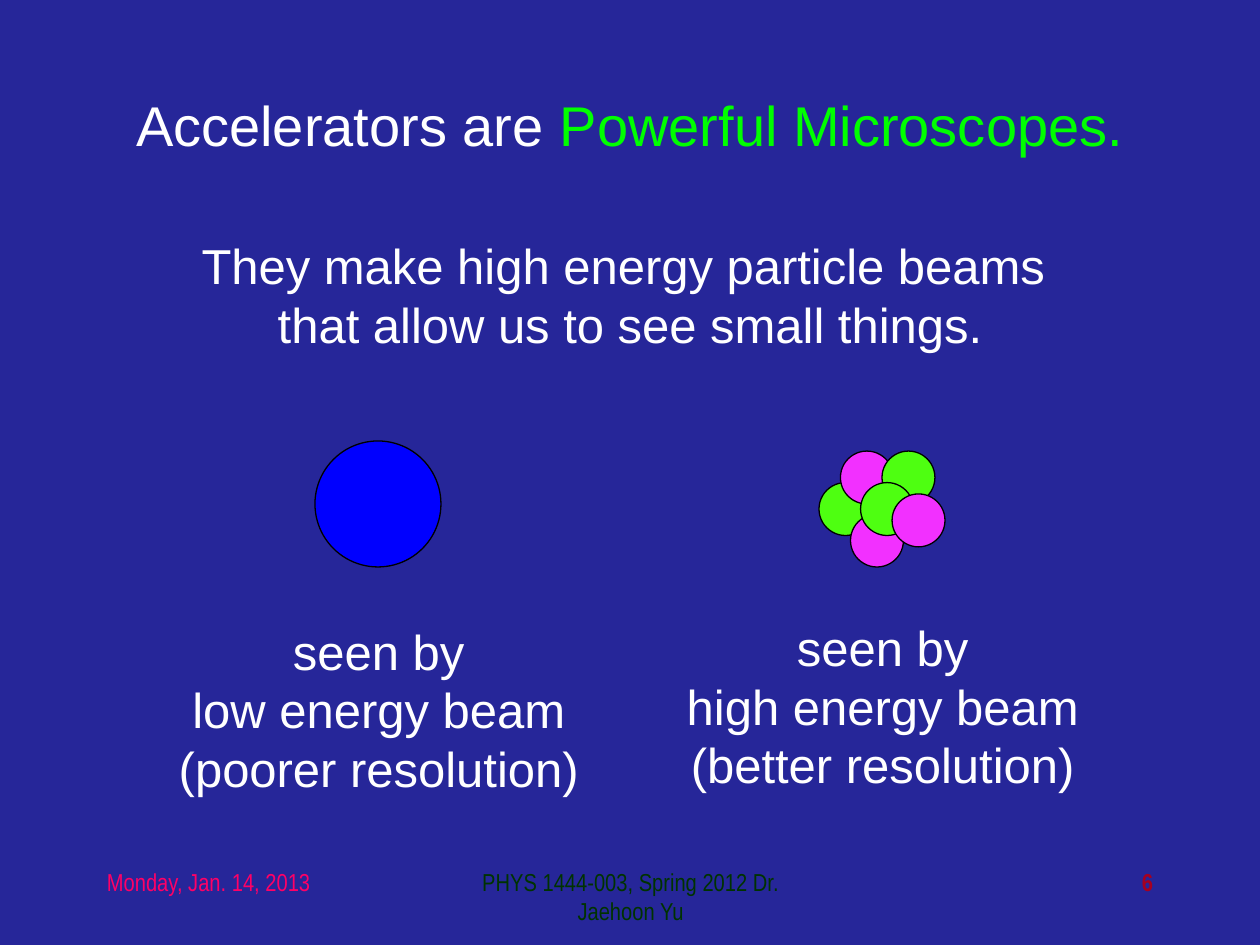
from pptx import Presentation
from pptx.dml.color import RGBColor
from pptx.enum.shapes import MSO_SHAPE
from pptx.enum.text import PP_ALIGN
from pptx.util import Inches, Pt

WHITE, BLACK, LIME = "FFFFFF", "000000", "00FF00"
GREEN, MAGENTA, BLUE = "4EFF11", "F230FF", "0000FF"
LEFT, CENTER, RIGHT = PP_ALIGN.LEFT, PP_ALIGN.CENTER, PP_ALIGN.RIGHT

FOOTERS = [
    ("Monday, Jan. 14, 2013", 0.75, 2.08, LEFT, "FF0066", False),
    ("PHYS 1444-003, Spring 2012 Dr. Jaehoon Yu", 3.42, 3.17, CENTER, "003300", False),
    ("6", 7.17, 2.08, RIGHT, "A50021", True),
]
TITLE = [("Accelerators are ", WHITE), ("Powerful Microscopes.", LIME)]
STATEMENTS = [
    (["They make high energy particle beams ", "that allow us to see small things."],
     (0, 1.82, 10, 1.03)),
    (["seen by", "high energy beam", "(better resolution)"], (5.17, 4.85, 3.67, 1.5)),
    (["seen by", "low energy beam", "(poorer resolution)"], (1.17, 4.88, 3.67, 1.5)),
]
NUCLEONS = [
    (6.5, 3.83, GREEN),
    (6.67, 3.58, MAGENTA),
    (6.75, 4.08, MAGENTA),
    (7, 3.58, GREEN),
    (6.83, 3.83, GREEN),
    (7.08, 3.92, MAGENTA),
]
NUCLEON_SIZE = 0.42


def color(value):
    return RGBColor.from_string(value)


def add_text(slide, box, lines, size, font="Arial", align=CENTER, bold=False):
    frame = slide.shapes.add_textbox(*map(Inches, box)).text_frame
    frame.word_wrap = True
    for index, runs in enumerate(lines):
        paragraph = frame.add_paragraph() if index else frame.paragraphs[0]
        paragraph.alignment = align
        paragraph.font.name = font
        paragraph.font.size = Pt(size)
        paragraph.font.bold = bold
        for text, text_color in runs:
            run = paragraph.add_run()
            run.text = text
            run.font.color.rgb = color(text_color)


def add_circle(shapes, left, top, size, fill):
    circle = shapes.add_shape(MSO_SHAPE.OVAL, *map(Inches, (left, top, size, size)))
    circle.shadow.inherit = False
    circle.fill.solid()
    circle.fill.fore_color.rgb = color(fill)
    circle.line.color.rgb = color(BLACK)
    circle.line.width = Pt(0.75)


def main():
    presentation = Presentation()
    presentation.slide_width, presentation.slide_height = Inches(10), Inches(7.5)
    slide = presentation.slides.add_slide(presentation.slide_layouts[6])
    slide.background.fill.solid()
    slide.background.fill.fore_color.rgb = color("262699")

    for text, left, width, align, text_color, bold in FOOTERS:
        add_text(slide, (left, 6.83, width, 0.5), [[(text, text_color)]], 14,
                 "Arial Narrow", align, bold)

    add_circle(slide.shapes, 2.5, 3.5, 1, BLUE)
    nucleus = slide.shapes.add_group_shape()
    for left, top, fill in NUCLEONS:
        add_circle(nucleus.shapes, left, top, NUCLEON_SIZE, fill)

    add_text(slide, (0, 0.67, 10, 0.63), [TITLE], 32)
    for lines, box in STATEMENTS:
        add_text(slide, box, [[(line, WHITE)] for line in lines], 28)

    presentation.save("out.pptx")


if __name__ == "__main__":
    main()
